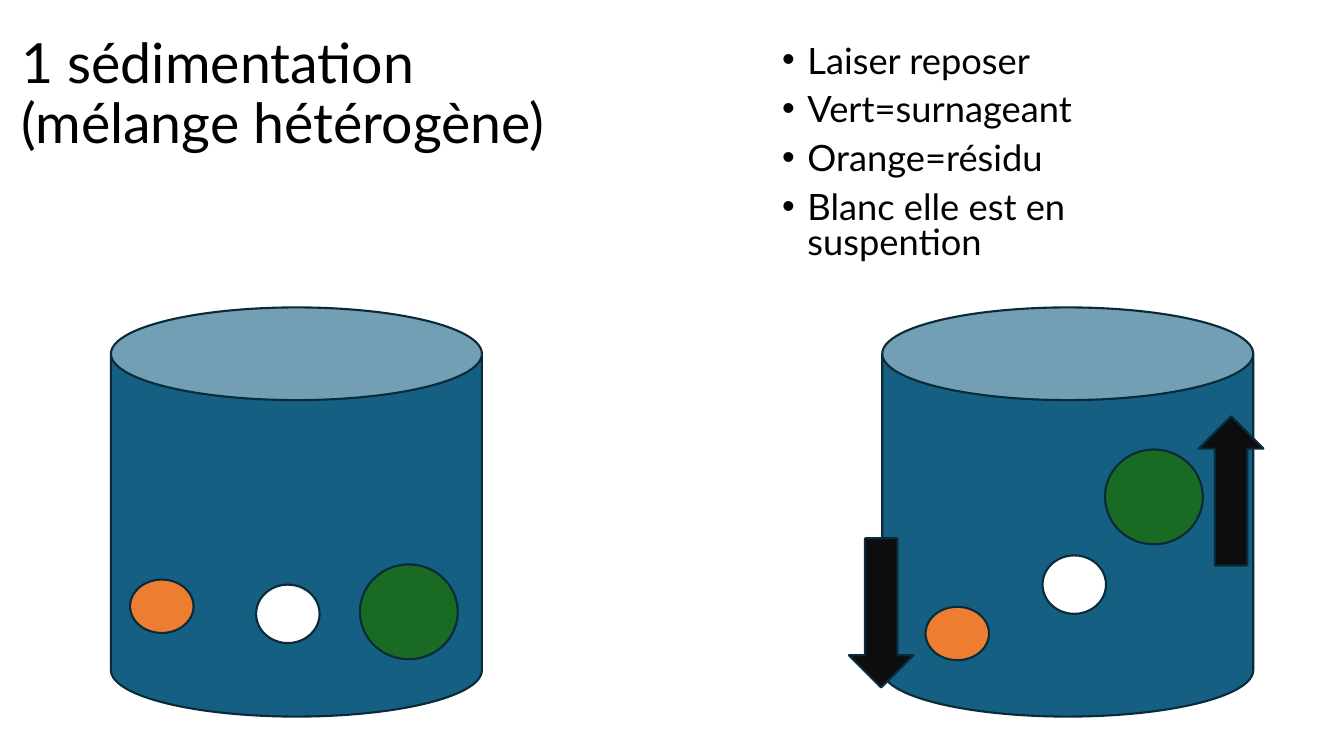
"""Builds a slide on sedimentation with two jars, before and after settling."""
from dataclasses import dataclass

from lxml import etree
from pptx import Presentation
from pptx import util as u
from pptx.dml.color import RGBColor
from pptx.enum import shapes, text
from pptx.oxml.ns import qn

TITLE = "1 sédimentation\v(mélange hétérogène)"
TITLE_FRAME = (0.11, 0.32, 6.89, 1.26)
REMARKS = ["Laiser reposer", "Vert=surnageant", "Orange=résidu", "Blanc elle est en suspention"]
REMARKS_FRAME = (7.66, 0.41, 4.55, 2.35)

JAR_TOP, JAR_SIZE = 3.05, (3.68, 4.06)
GRAIN_SIZES = {"orange": (0.63, 0.53), "green": (0.97, 0.94), "white": (0.63, 0.58)}
JARS = [
    {"left": 1.1, "grains": {"green": (3.57, 5.6), "orange": (1.29, 5.75), "white": (2.54, 5.8)}},
    {"left": 8.75, "grains": {"green": (10.96, 4.46), "orange": (9.18, 6.02), "white": (10.34, 5.51)}},
]
ARROW_SIZE = (0.64, 1.48)
ARROWS = [{"at": (11.89, 4.13), "turn": 180}, {"at": (8.42, 5.34), "turn": 0}]


@dataclass(frozen=True)
class Theme:
    font: str = "Lato"
    title_size: float = 39.6
    bullet_size: float = 25.9
    ink: str = "000000"
    jar: str = "156082"
    outline: str = "092A39"
    arrow: str = "0D0D0D"
    orange: str = "ED7D31"
    green: str = "196B24"
    white: str = "FFFFFF"


THEME = Theme()
GRAIN_COLORS = {"orange": THEME.orange, "green": THEME.green, "white": THEME.white}


def style_paragraph(para, size, spacing):
    para.alignment = text.PP_ALIGN.LEFT
    para.line_spacing = spacing
    para.font.name = THEME.font
    para.font.size = u.Pt(size)
    para.font.color.rgb = RGBColor.from_string(THEME.ink)


def add_title(page):
    title = page.shapes.title
    title.left, title.top, title.width, title.height = map(u.Inches, TITLE_FRAME)
    frame = title.text_frame
    frame.text = TITLE
    frame.auto_size = text.MSO_AUTO_SIZE.NONE
    frame.vertical_anchor = text.MSO_ANCHOR.MIDDLE
    style_paragraph(frame.paragraphs[0], THEME.title_size, 0.9)


def add_remarks(page):
    frame = page.shapes.add_textbox(*map(u.Inches, REMARKS_FRAME)).text_frame
    frame.word_wrap = True
    frame.text = "\n".join(REMARKS)
    for para in frame.paragraphs:
        style_paragraph(para, THEME.bullet_size, 0.8)
        para.space_before = u.Pt(10)
        properties = para._p.get_or_add_pPr()
        properties.set("marL", str(u.Inches(0.25)))
        properties.set("indent", str(u.Inches(-0.25)))
        bullet_font = etree.Element(qn("a:buFont"), typeface="Arial")
        bullet = etree.Element(qn("a:buChar"), char="•")
        defaults = properties.find(qn("a:defRPr"))
        defaults.addprevious(bullet_font)
        defaults.addprevious(bullet)


def add_figure(page, kind, corner, size, color):
    figure = page.shapes.add_shape(kind, *map(u.Inches, corner + size))
    figure.shadow.inherit = False
    figure.fill.solid()
    figure.fill.fore_color.rgb = RGBColor.from_string(color)
    figure.line.color.rgb = RGBColor.from_string(THEME.outline)
    figure.line.width = u.Pt(1.5)
    return figure


def main():
    deck = Presentation()
    deck.slide_width, deck.slide_height = u.Inches(13.33), u.Inches(7.5)
    page = deck.slides.add_slide(deck.slide_layouts[5])
    add_title(page)
    add_remarks(page)
    kinds = shapes.MSO_SHAPE
    for jar in JARS:
        add_figure(page, kinds.CAN, (jar["left"], JAR_TOP), JAR_SIZE, THEME.jar)
        for name, corner in jar["grains"].items():
            add_figure(page, kinds.FLOWCHART_CONNECTOR, corner, GRAIN_SIZES[name], GRAIN_COLORS[name])
    for arrow in ARROWS:
        figure = add_figure(page, kinds.DOWN_ARROW, arrow["at"], ARROW_SIZE, THEME.arrow)
        figure.rotation = arrow["turn"]
    deck.save("out.pptx")


if __name__ == "__main__":
    main()
